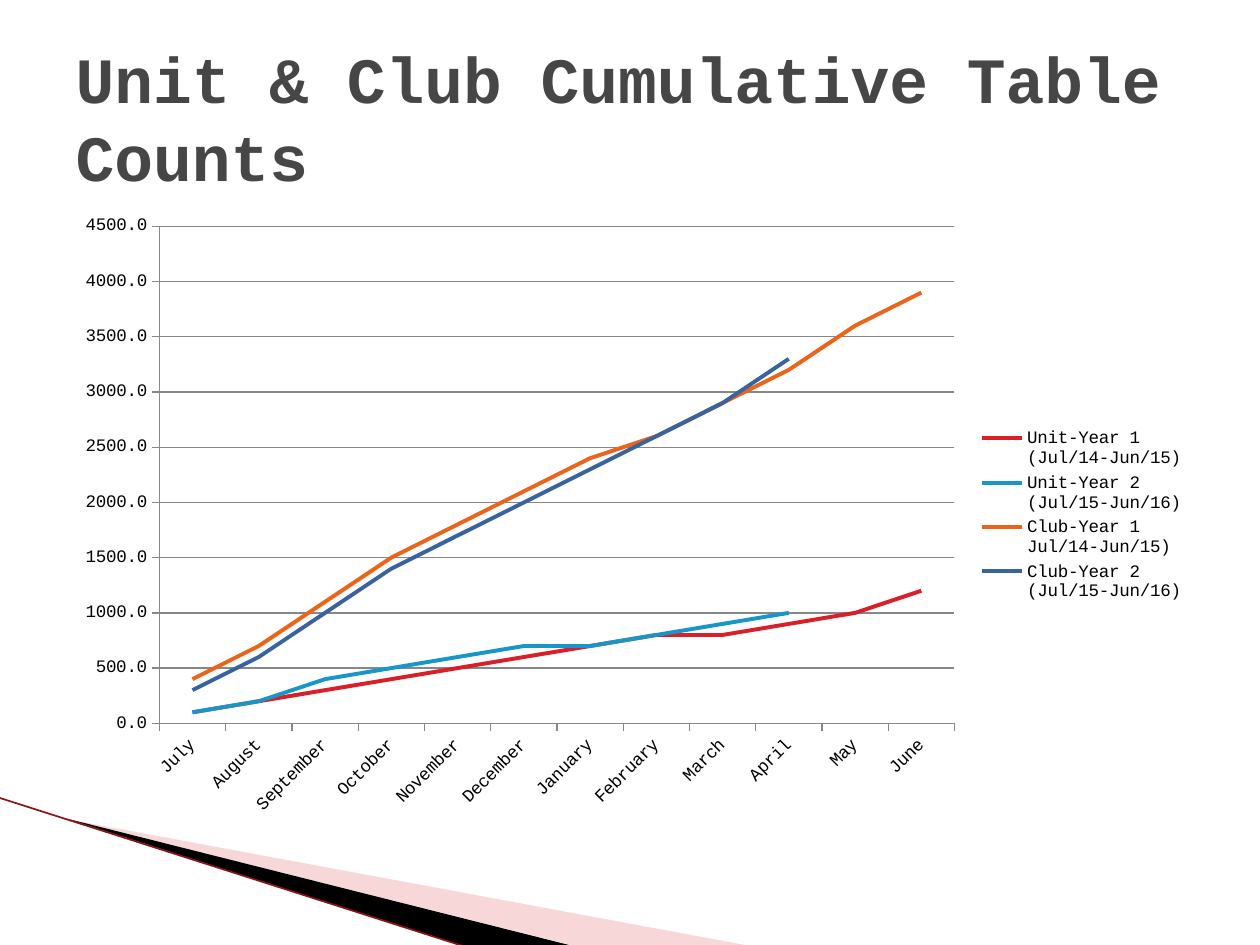
from lxml import etree
from pptx import Presentation
from pptx.chart.data import CategoryChartData
from pptx.dml.color import RGBColor
from pptx.enum.chart import XL_CHART_TYPE, XL_LEGEND_POSITION, XL_TICK_MARK
from pptx.enum.shapes import MSO_CONNECTOR
from pptx.enum.text import MSO_ANCHOR, PP_ALIGN
from pptx.oxml import parse_xml
from pptx.oxml.ns import nsdecls, qn
from pptx.util import Pt

LINE = XL_CHART_TYPE.LINE
LEGEND_RIGHT = XL_LEGEND_POSITION.RIGHT
TICK_OUT = XL_TICK_MARK.OUTSIDE
STRAIGHT = MSO_CONNECTOR.STRAIGHT
MIDDLE = MSO_ANCHOR.MIDDLE
LEFT = PP_ALIGN.LEFT

FONT = "Courier New"
BLACK = RGBColor(0x00, 0x00, 0x00)
TITLE_GRAY = RGBColor(0x46, 0x46, 0x46)
GRID_GRAY = RGBColor(0x87, 0x87, 0x87)
PINK = RGBColor(0xED, 0x9D, 0x9E)
DARK_RED = RGBColor(0x8A, 0x14, 0x18)
RED = RGBColor(0xDA, 0x1F, 0x28)
TEAL = RGBColor(0x18, 0x96, 0xC8)
ORANGE = RGBColor(0xEB, 0x64, 0x1B)
BLUE = RGBColor(0x39, 0x63, 0x9D)

CHART_W, CHART_H = 648, 356.4
MONTHS = ["July", "August", "September", "October", "November", "December",
          "January", "February", "March", "April", "May", "June"]
SERIES = [
    ("Unit-Year 1\n(Jul/14-Jun/15)", RED,
     [100, 200, 300, 400, 500, 600, 700, 800, 800, 900, 1000, 1200]),
    ("Unit-Year 2\n(Jul/15-Jun/16)", TEAL,
     [100, 200, 400, 500, 600, 700, 700, 800, 900, 1000]),
    ("Club-Year 1\nJul/14-Jun/15)", ORANGE,
     [400, 700, 1100, 1500, 1800, 2100, 2400, 2600, 2900, 3200, 3600, 3900]),
    ("Club-Year 2\n(Jul/15-Jun/16)", BLUE,
     [300, 600, 1000, 1400, 1700, 2000, 2300, 2600, 2900, 3300]),
]


def format_font(font, size, color, bold=False):
    font.name = FONT
    font.size = Pt(size)
    font.bold = bold
    font.color.rgb = color


def write_text(tf, text, size=10, color=BLACK, bold=False):
    tf.word_wrap = True
    tf.vertical_anchor = MIDDLE
    p = tf.paragraphs[0]
    p.alignment = LEFT
    p.line_spacing = 1.0
    r = p.add_run()
    r.text = text
    format_font(r.font, size, color, bold)


def add_title(s, text):
    sp = s.shapes.title
    sp.left, sp.top, sp.width, sp.height = Pt(36), Pt(21.6), Pt(648), Pt(90)
    write_text(sp.text_frame, text, size=36.9, color=TITLE_GRAY, bold=True)


def add_wedge(s, points, color, opacity=100):
    start, *rest = [(Pt(x), Pt(y)) for x, y in points]
    builder = s.shapes.build_freeform(*start)
    builder.add_line_segments(rest, close=True)
    sp = builder.convert_to_shape()
    sp.shadow.inherit = False
    sp.fill.solid()
    sp.fill.fore_color.rgb = color
    sp.line.fill.background()
    if opacity < 100:
        clr = sp.fill._xPr.find(".//" + qn("a:srgbClr"))
        etree.SubElement(clr, qn("a:alpha")).set("val", str(opacity * 1000))


def add_edge(s, x1, y1, x2, y2):
    c = s.shapes.add_connector(STRAIGHT, Pt(x1), Pt(y1), Pt(x2), Pt(y2))
    c.line.color.rgb = DARK_RED
    c.line.width = Pt(0.95)
    etree.SubElement(c._element.spPr, qn("a:effectLst"))


def format_line(line, color, width):
    line.color.rgb = color
    line.width = Pt(width)


def set_plot_area(chart, x, y, w, h):
    """Place the inner plot area; lengths are points within the chart."""
    fractions = {"x": x / CHART_W, "y": y / CHART_H,
                 "w": w / CHART_W, "h": h / CHART_H}
    items = "".join(f'<c:{k} val="{v:.4f}"/>' for k, v in fractions.items())
    layout = parse_xml(
        f'<c:layout {nsdecls("c")}><c:manualLayout><c:layoutTarget val="inner"/>'
        f'<c:xMode val="edge"/><c:yMode val="edge"/>{items}'
        '</c:manualLayout></c:layout>')
    area = chart._chartSpace.chart.plotArea
    for old in area.findall(qn("c:layout")):
        area.remove(old)
    area.insert(0, layout)


def add_line_chart(s):
    data = CategoryChartData(number_format="0.0")
    data.categories = MONTHS
    for name, _, values in SERIES:
        data.add_series(name, values + [None] * (len(MONTHS) - len(values)))
    chart = s.shapes.add_chart(LINE, Pt(36), Pt(116.6), Pt(CHART_W),
                               Pt(CHART_H), data).chart
    format_font(chart.font, 10, BLACK)
    chart.has_title = False
    chart.has_legend = True
    chart.legend.position = LEGEND_RIGHT
    chart.legend.include_in_layout = False
    set_plot_area(chart, x=55.1, y=12.8, w=454.4, h=284.1)

    # Axes
    for axis in (chart.category_axis, chart.value_axis):
        axis.major_tick_mark = TICK_OUT
        format_line(axis.format.line, GRID_GRAY, 0.75)
    body = chart.category_axis.tick_labels._element.get_or_add_txPr().bodyPr
    body.set("rot", "-2700000")
    value_axis = chart.value_axis
    value_axis.minimum_scale, value_axis.maximum_scale = 0, 4500
    value_axis.major_unit = 500
    value_axis.tick_labels.number_format = "0.0"
    value_axis.tick_labels.number_format_is_linked = False
    value_axis.has_major_gridlines = True
    format_line(value_axis.major_gridlines.format.line, GRID_GRAY, 0.75)

    # Series
    chart.plots[0].vary_by_categories = False
    for series, (_, color, _) in zip(chart.plots[0].series, SERIES):
        series.smooth = False
        format_line(series.format.line, color, 2.25)


def main():
    prs = Presentation()
    prs.slide_width, prs.slide_height = Pt(720), Pt(540)
    s = prs.slides.add_slide(prs.slide_layouts[5])

    # Corner decoration
    add_wedge(s, [(39.6, 468.4), (428.4, 540.5), (328.3, 540.5)], PINK, opacity=40)
    add_wedge(s, [(38.2, 467.8), (327, 540.5), (266, 541)], BLACK)
    add_edge(s, -0.7, 455.8, 267.1, 541.4)

    # Content
    add_title(s, "Unit & Club Cumulative Table Counts")
    add_line_chart(s)
    prs.save("out.pptx")


if __name__ == "__main__":
    main()
